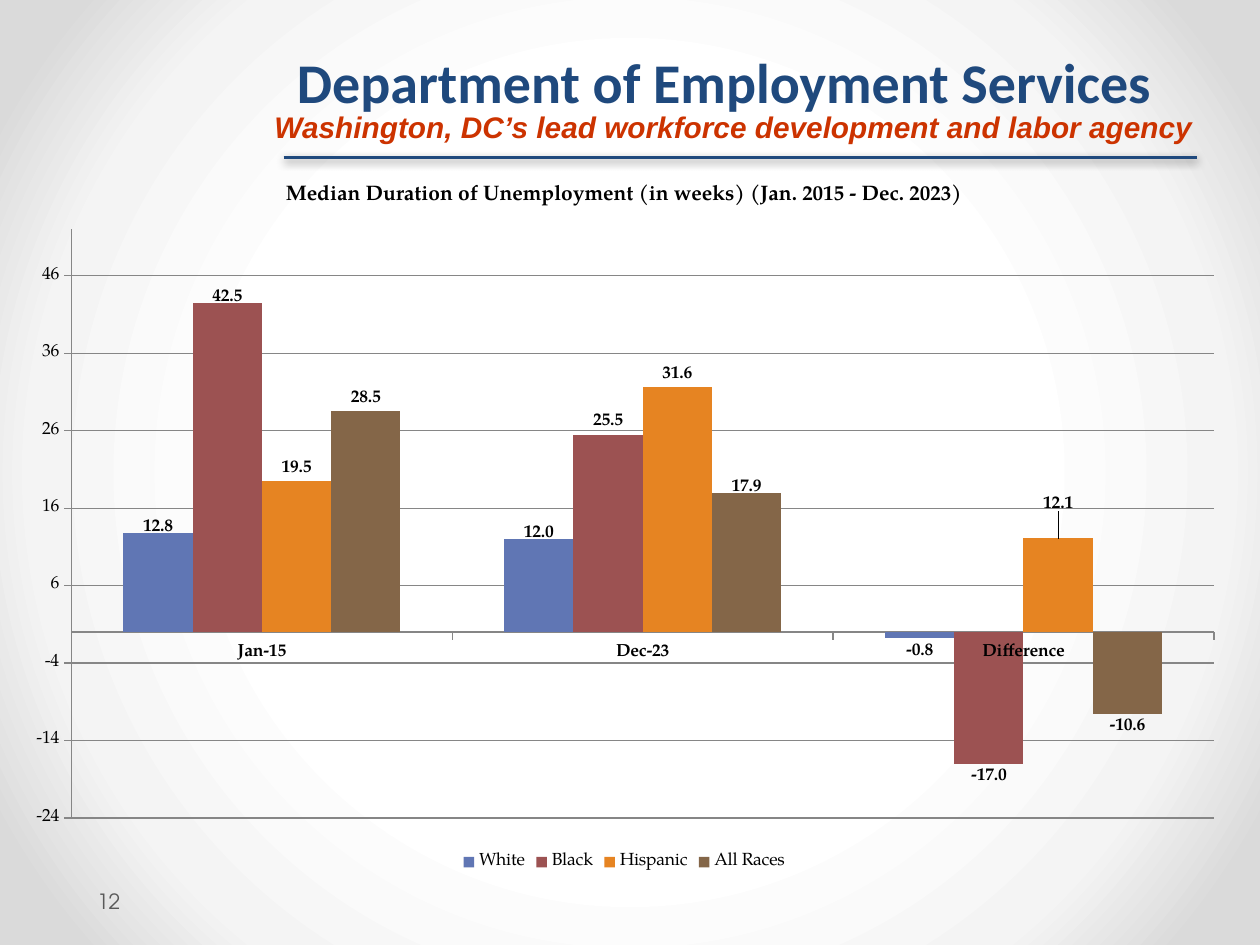
import lxml.etree
import pptx
import pptx.chart.data
import pptx.dml.color
import pptx.enum.chart
import pptx.enum.shapes
import pptx.enum.text
import pptx.oxml
import pptx.oxml.ns
import pptx.util

Inches = pptx.util.Inches
Pt = pptx.util.Pt
qn = pptx.oxml.ns.qn
NS = pptx.oxml.ns.nsdecls("a")

HUES = {
    "navy": "1F497D", "red": "CC3300", "gray": "595959", "grid": "868686",
    "black": "000000", "White": "6076B4", "Black": "9C5252",
    "Hispanic": "E68422", "All Races": "846648",
}
FADE = [(50, "FFFFFF"), (76, "F4F4F4"), (92, "DADADA")]
SERIF = "TeX Gyre Pagella"
CATS = ["Jan-15", "Dec-23", "Difference"]
WEEKS = {
    "White": (12.8, 12.0, -0.8),
    "Black": (42.5, 25.5, -17.0),
    "Hispanic": (19.5, 31.6, 12.1),
    "All Races": (28.5, 17.9, -10.6),
}
# Vertical label shifts, as a share of the chart height
SHIFTS = {
    "White": {0: 0.01, 1: 0.01},
    "Black": {0: 0.01},
    "Hispanic": {2: -0.03},
    "All Races": {1: 0.01},
}


def rgb(hue):
    return pptx.dml.color.RGBColor.from_string(HUES[hue])


def style(font, size, hue="black", face=SERIF, bold=False, italic=False):
    font.size, font.name = Pt(size), face
    font.bold, font.italic = bold, italic
    font.color.rgb = rgb(hue)


def write(frame, text, align=None, **form):
    para = frame.paragraphs[0]
    para.alignment = align
    run = para.add_run()
    run.text = text
    style(run.font, **form)


def layout(spots, inner=False):
    """Return a manual chart layout with the given x, y, w, h shares."""
    root = lxml.etree.Element(qn("c:layout"))
    man = lxml.etree.SubElement(root, qn("c:manualLayout"))
    pairs = list(spots.items())
    if inner:
        pairs = [("layoutTarget", "inner"), ("xMode", "edge"),
                 ("yMode", "edge")] + pairs
    for tag, val in pairs:
        lxml.etree.SubElement(man, qn("c:" + tag)).set("val", str(val))
    return root


class Page:
    """Holds the current slide and draws each kind of element on it."""

    def __init__(self, deck):
        self.slide = deck.slides.add_slide(deck.slide_layouts[6])
        self.shapes = self.slide.shapes

    def glow(self, stops):
        """Fill the background with a round gradient from the centre."""
        fill = self.slide.background.fill
        fill.gradient()
        old = self.slide._element.find(".//" + qn("a:gradFill"))
        marks = "".join(
            f'<a:gs pos="{pos * 1000}"><a:srgbClr val="{hue}"/></a:gs>'
            for pos, hue in stops)
        new = pptx.oxml.parse_xml(
            f'<a:gradFill {NS} rotWithShape="1"><a:gsLst>{marks}</a:gsLst>'
            '<a:path path="circle"><a:fillToRect l="50000" t="50000" '
            'r="50000" b="50000"/></a:path></a:gradFill>')
        old.getparent().replace(old, new)

    def text(self, words, box, wrap=True, left=0.1, mid=False, **form):
        frame = self.shapes.add_textbox(*map(Inches, box)).text_frame
        frame.word_wrap = wrap
        frame.margin_left = Inches(left)
        if mid:
            frame.vertical_anchor = pptx.enum.text.MSO_ANCHOR.MIDDLE
        write(frame, words, **form)

    def rule(self, start, end, hue, width):
        line = self.shapes.add_connector(
            pptx.enum.shapes.MSO_CONNECTOR.STRAIGHT,
            *map(Inches, start + end))
        line.line.color.rgb = rgb(hue)
        line.line.width = Pt(width)
        line._element.spPr.append(pptx.oxml.parse_xml(
            f'<a:effectLst {NS}><a:outerShdw blurRad="{Pt(5)}" '
            f'dist="{Pt(1.6)}" dir="5400000" rotWithShape="0">'
            '<a:srgbClr val="000000"><a:alpha val="38000"/></a:srgbClr>'
            '</a:outerShdw></a:effectLst>'))

    def chart(self, title, box):
        enum = pptx.enum.chart
        data = pptx.chart.data.CategoryChartData(number_format="0.0")
        data.categories = CATS
        for name, vals in WEEKS.items():
            data.add_series(name, vals)
        chart = self.shapes.add_chart(
            enum.XL_CHART_TYPE.COLUMN_CLUSTERED,
            *map(Inches, box), data).chart
        style(chart.font, 10)
        chart.has_title = True
        write(chart.chart_title.text_frame, title, size=12, bold=True)
        chart.chart_title.include_in_layout = False
        chart.has_legend = True
        chart.legend.position = enum.XL_LEGEND_POSITION.BOTTOM
        chart.legend.include_in_layout = False
        self.axes(chart)
        plot = chart.plots[0]
        plot.gap_width, plot.overlap = 150, 0
        plot.vary_by_categories = False
        for bars in plot.series:
            self.bars(bars)
        area = chart._chartSpace.chart.plotArea
        for old in area.findall(qn("c:layout")):
            area.remove(old)
        area.insert(0, layout(
            {"x": 0.05, "y": 0.1, "w": 0.93, "h": 0.82}, inner=True))

    def axes(self, chart):
        cat, val = chart.category_axis, chart.value_axis
        for axis in (cat, val):
            axis.major_tick_mark = pptx.enum.chart.XL_TICK_MARK.OUTSIDE
            axis.format.line.color.rgb = rgb("grid")
        style(cat.tick_labels.font, 10, bold=True)
        val.minimum_scale, val.maximum_scale, val.major_unit = -24, 52, 10
        val.has_major_gridlines = True
        val.major_gridlines.format.line.color.rgb = rgb("grid")
        val.tick_labels.number_format = "0"
        val.tick_labels.number_format_is_linked = False

    def bars(self, bars):
        bars.invert_if_negative = False
        bars.format.fill.solid()
        bars.format.fill.fore_color.rgb = rgb(bars.name)
        out = pptx.enum.chart.XL_LABEL_POSITION.OUTSIDE_END
        tags = bars.data_labels
        tags.show_value = True
        tags.position = out
        tags.number_format, tags.number_format_is_linked = "0.0", False
        style(tags.font, 10, bold=True)
        for spot, drop in SHIFTS[bars.name].items():
            tag = bars.points[spot].data_label
            style(tag.font, 10, bold=True)
            tag.position = out
            node = bars._element.xpath(
                f"c:dLbls/c:dLbl[c:idx/@val='{spot}']")[0]
            form = lxml.etree.Element(qn("c:numFmt"))
            form.set("formatCode", "0.0")
            form.set("sourceLinked", "0")
            node.insert(1, layout({"x": 0, "y": drop}))
            node.insert(2, form)


def main():
    deck = pptx.Presentation()
    deck.slide_width, deck.slide_height = Inches(10), Inches(7.5)
    page = Page(deck)
    page.glow(FADE)
    page.text("Department of Employment Services", (2, 0.33, 7.5, 0.75),
              align=pptx.enum.text.PP_ALIGN.CENTER,
              size=32, face="Calibri", hue="navy", bold=True)
    page.text("Washington, DC’s lead workforce development and labor agency",
              (2.08, 0.81, 7.58, 0.38), wrap=False,
              size=17, face="Arial", hue="red", bold=True, italic=True)
    page.rule((2.25, 1.25), (9.5, 1.25), "navy", 2)
    page.text("12", (0.72, 6.95, 3.11, 0.4), left=0.05, mid=True,
              size=12, face="TeX Gyre Adventor", hue="gray")
    page.chart("Median Duration of Unemployment (in weeks) "
               "(Jan. 2015 - Dec. 2023)", (0.08, 1.25, 9.75, 5.7))
    deck.save("out.pptx")


if __name__ == "__main__":
    main()
